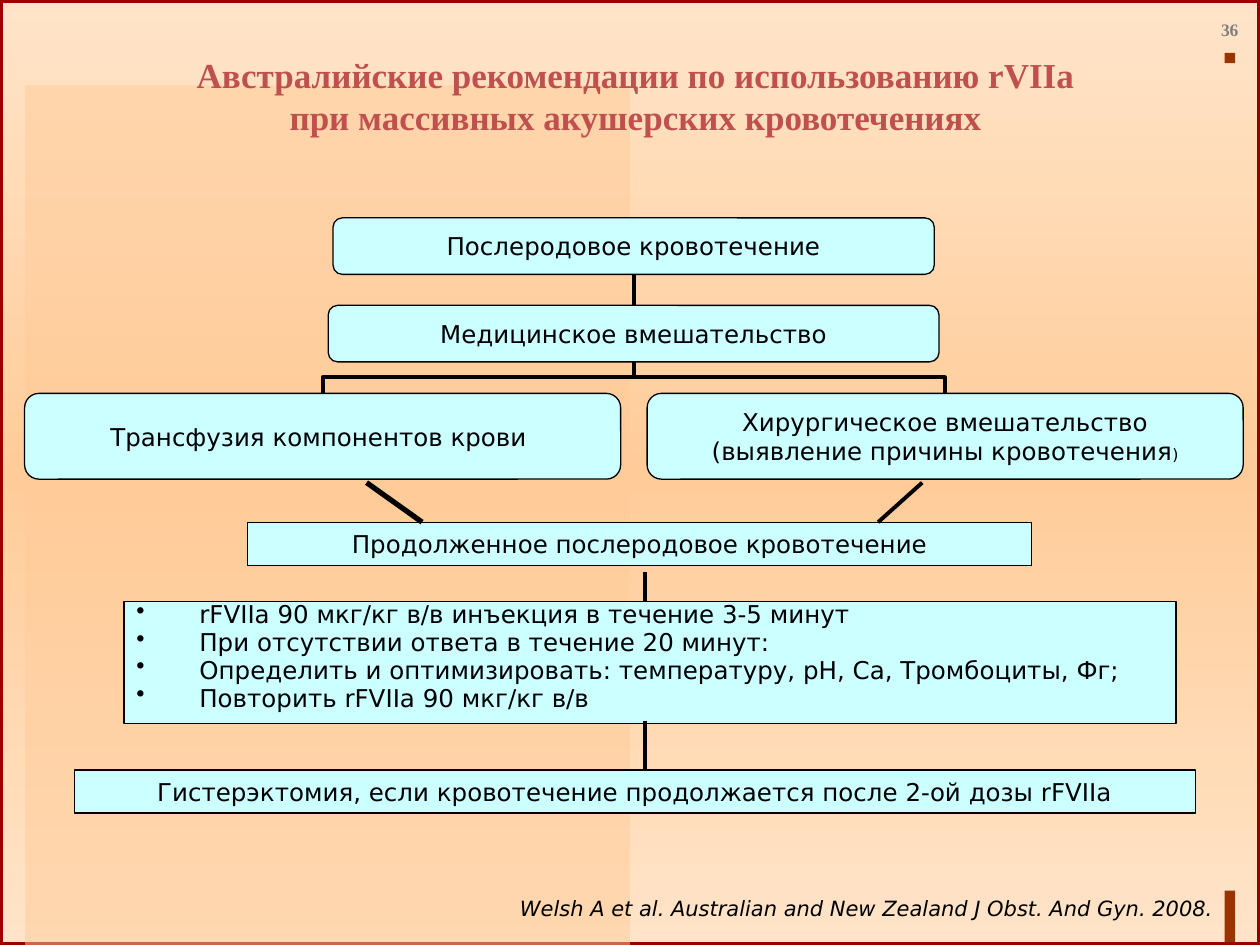
from copy import deepcopy
from dataclasses import dataclass

from lxml import etree
from pptx import Presentation
from pptx.dml.color import RGBColor
from pptx.enum.shapes import MSO_CONNECTOR, MSO_SHAPE
from pptx.enum.text import MSO_ANCHOR, PP_ALIGN
from pptx.oxml.ns import qn
from pptx.util import Pt

RECT, ROUNDED = MSO_SHAPE.RECTANGLE, MSO_SHAPE.ROUNDED_RECTANGLE
STRAIGHT, ELBOW = MSO_CONNECTOR.STRAIGHT, MSO_CONNECTOR.ELBOW
LEFT, CENTER, RIGHT = PP_ALIGN.LEFT, PP_ALIGN.CENTER, PP_ALIGN.RIGHT
TOP, MIDDLE = MSO_ANCHOR.TOP, MSO_ANCHOR.MIDDLE
SIDE_TOP, SIDE_BOTTOM = 0, 2


@dataclass(frozen=True)
class Theme:
    serif: str = "Times New Roman"
    sans: str = "DejaVu Sans"
    edge: str = "FFE4C9"
    peach: str = "FFCC99"
    frame: str = "990000"
    accent: str = "993300"
    title: str = "C0504D"
    number: str = "808080"
    box: str = "CCFFFF"
    ink: str = "000004"
    black: str = "000000"
    title_size: float = 20
    body_size: float = 14
    source_size: float = 12
    number_size: float = 10
    small_size: float = 9
    outline: float = 0.75
    link: float = 2.25
    heavy: float = 3


@dataclass(frozen=True)
class Area:
    left: float
    top: float
    width: float
    height: float


@dataclass(frozen=True)
class Style:
    size: float
    color: str
    font: str
    bold: bool = False
    italic: bool = False


@dataclass(frozen=True)
class Step:
    area: Area
    lines: tuple
    kind: int = RECT
    wrap: bool = True
    align: int = CENTER
    anchor: int = MIDDLE
    bulleted: bool = False


@dataclass(frozen=True)
class Link:
    start: tuple
    end: tuple
    weight: float


THEME = Theme()
BODY = Style(THEME.body_size, THEME.ink, THEME.sans)
SMALL = Style(THEME.small_size, THEME.ink, THEME.sans)
TITLE = Style(THEME.title_size, THEME.title, THEME.serif, bold=True)
NUMBER = Style(THEME.number_size, THEME.number, THEME.serif, bold=True)
SOURCE = Style(THEME.source_size, THEME.black, THEME.sans, italic=True)

BRANCH_TOP, BRANCH_WIDTH, BRANCH_HEIGHT = 224.8, 340.6, 49
STEPS = (
    Step(Area(190.3, 124.5, 343.6, 32.3), ("Послеродовое кровотечение",), ROUNDED, False),
    Step(Area(187.6, 174.5, 349, 32.3), ("Медицинское вмешательство",), ROUNDED, False),
    Step(Area(14.1, BRANCH_TOP, BRANCH_WIDTH, BRANCH_HEIGHT),
         ("Трансфузия компонентов крови ",), ROUNDED, False),
    Step(Area(369.8, BRANCH_TOP, BRANCH_WIDTH, BRANCH_HEIGHT),
         ("Хирургическое вмешательство", "(выявление причины кровотечения"), ROUNDED, False),
    Step(Area(141.6, 298.4, 448, 24.6), ("Продолженное послеродовое кровотечение",)),
    Step(Area(70.8, 343.6, 601.2, 69.8),
         ("rFVIIa 90 мкг/кг в/в инъекция в течение 3-5 минут",
          "При отсутствии ответа в течение 20 минут:",
          "Определить и оптимизировать: температуру, рН, Са, Тромбоциты, Фг;",
          "Повторить rFVIIa 90 мкг/кг в/в"), align=LEFT, anchor=TOP, bulleted=True),
    Step(Area(42.5, 440, 640.8, 24.6),
         ("Гистерэктомия, если кровотечение продолжается после 2-ой дозы rFVIIa",)),
)
AXIS = 368.5
LINKS = (
    Link((527, 275.8), (501.8, 298.4), THEME.link),
    Link((209.5, 275.8), (241.2, 298.4), THEME.heavy),
    Link((AXIS, 326.9), (AXIS, 343.6), THEME.link),
    Link((AXIS, 411.8), (AXIS, 440), THEME.link),
)


def rgb(value: str) -> RGBColor:
    return RGBColor.from_string(value)


def add_span(para, text: str, style: Style):
    span = para.add_run()
    span.text = text
    font = span.font
    font.size, font.name = Pt(style.size), style.font
    font.bold, font.italic = style.bold, style.italic
    font.color.rgb = rgb(style.color)


def add_bullet(para):
    para.line_spacing = 0.7
    para.space_after = Pt(4.2)
    props = para._p.get_or_add_pPr()
    props.set("marL", str(Pt(36)))
    props.set("indent", str(Pt(-36)))
    etree.SubElement(props, qn("a:buChar")).set("char", "•")


def write_lines(frame, lines: tuple, style: Style, align: int, bulleted: bool = False):
    for index, line in enumerate(lines):
        para = frame.add_paragraph() if index else frame.paragraphs[0]
        para.alignment = align
        if bulleted:
            add_bullet(para)
        add_span(para, line, style)


def add_panel(page, kind: int, area: Area, fill: str = "", line: str = "", weight: float = 0):
    box = page.shapes.add_shape(kind, Pt(area.left), Pt(area.top), Pt(area.width), Pt(area.height))
    box.shadow.inherit = False
    if fill:
        box.fill.solid()
        box.fill.fore_color.rgb = rgb(fill)
    else:
        box.fill.background()
    if line:
        box.line.color.rgb = rgb(line)
        box.line.width = Pt(weight)
    else:
        box.line.fill.background()
    return box


def add_step(page, step: Step):
    box = add_panel(page, step.kind, step.area, THEME.box, THEME.black, THEME.outline)
    frame = box.text_frame
    frame.word_wrap, frame.vertical_anchor = step.wrap, step.anchor
    write_lines(frame, step.lines, BODY, step.align, step.bulleted)
    return box


def add_text(page, area: Area, lines: tuple, style: Style, align: int):
    box = page.shapes.add_textbox(Pt(area.left), Pt(area.top), Pt(area.width), Pt(area.height))
    frame = box.text_frame
    frame.word_wrap, frame.vertical_anchor = True, MIDDLE
    write_lines(frame, lines, style, align)


def add_link(page, link: Link, kind: int = STRAIGHT, turn: int = 0):
    connector = page.shapes.add_connector(kind, *(Pt(v) for v in link.start + link.end))
    connector.line.color.rgb = rgb(THEME.black)
    connector.line.width = Pt(link.weight)
    props = connector._element.spPr
    etree.SubElement(props, qn("a:effectLst"))
    if turn:
        props.find(qn("a:xfrm")).set("rot", str(turn * 60000))
    return connector


def paint_background(page):
    fill = page.background.fill
    fill.gradient()
    fill.gradient_angle = 90
    stops = page.element.find(".//" + qn("a:gsLst"))
    stops.append(deepcopy(stops[-1]))
    colors = (THEME.edge, THEME.peach, THEME.edge)
    for stop, position, color in zip(fill.gradient_stops, (0, 0.5, 1), colors):
        stop.position = position
        stop.color.rgb = rgb(color)


def main():
    deck = Presentation()
    deck.slide_width, deck.slide_height = Pt(720), Pt(540)
    page = deck.slides.add_slide(deck.slide_layouts[6])

    # Background and frame
    paint_background(page)
    add_panel(page, RECT, Area(699.8, 509, 6, 30.2), THEME.accent)
    add_panel(page, RECT, Area(699.8, 30.2, 6, 6), THEME.accent)
    add_panel(page, RECT, Area(0, 0, 720, 540), line=THEME.frame, weight=THEME.heavy)
    tint = add_panel(page, RECT, Area(14.4, 48.8, 345.6, 491.2), THEME.peach)
    color = tint._element.spPr.find(qn("a:solidFill"))[0]
    etree.SubElement(color, qn("a:alpha")).set("val", "50000")

    # Slide number, title and source
    add_text(page, Area(685.4, 4, 34.6, 26), ("36",), NUMBER, CENTER)
    add_text(page, Area(0, 20.2, 731.5, 68.4),
             ("Австралийские рекомендации по использованию rVIIa ",
              "при массивных акушерских кровотечениях "), TITLE, CENTER)
    add_text(page, Area(33.8, 508.3, 666.7, 21.6),
             ("Welsh A et al. Australian and New Zealand J Obst. And Gyn. 2008.",), SOURCE, RIGHT)

    # Fork to the two branches: upright elbows turned about their centres
    add_link(page, Link((460, 126.7), (442, 304.6), THEME.link), ELBOW, 90)
    add_link(page, Link((264.3, 126.7), (282.3, 304.6), THEME.link), ELBOW, 270)

    # Steps and straight links
    boxes = [add_step(page, step) for step in STEPS]
    add_span(boxes[3].text_frame.paragraphs[-1], ")", SMALL)
    joint = add_link(page, Link((362.1, 174.5), (362.1, 156.8), THEME.link))
    joint.begin_connect(boxes[1], SIDE_TOP)
    joint.end_connect(boxes[0], SIDE_BOTTOM)
    for link in LINKS:
        add_link(page, link)

    deck.save("out.pptx")


if __name__ == "__main__":
    main()
